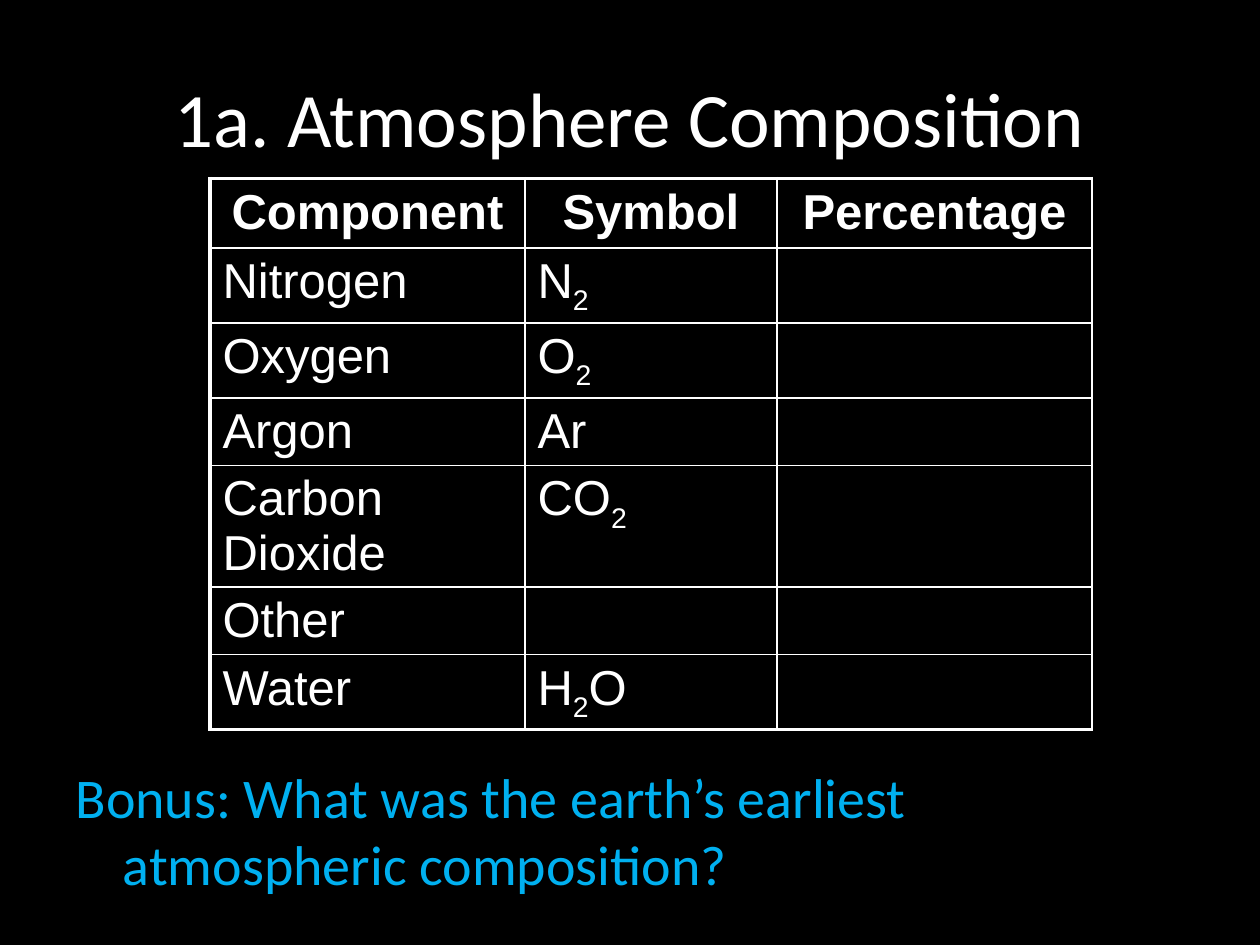
from pptx import Presentation
from pptx.dml.color import RGBColor
from pptx.enum.text import MSO_ANCHOR, MSO_AUTO_SIZE, PP_ALIGN
from pptx.oxml.ns import qn
from pptx.util import Pt
from lxml.etree import SubElement

BLACK = RGBColor(0x00, 0x00, 0x00)
WHITE = RGBColor(0xFF, 0xFF, 0xFF)
BLUE = RGBColor(0x00, 0xB0, 0xF0)

THIN, THICK = 1, 2.25
COL_WIDTHS = (180, 144, 180)
ROW_HEIGHTS = (39.6, 32.4, 32.4, 32.4, 32.4, 32.4, 38.2)
# Digits in the symbol column are set as subscripts
ROWS = (
    ("Component", "Symbol", "Percentage"),
    ("Nitrogen", "N2", ""),
    ("Oxygen", "O2", ""),
    ("Argon", "Ar", ""),
    ("Carbon Dioxide", "CO2", ""),
    ("Other", "", ""),
    ("Water", "H2O", ""),
)


def place(shape, box):
    shape.left, shape.top, shape.width, shape.height = map(Pt, box)


def set_font(p, name, size, color, bold=False):
    p.font.name, p.font.size, p.font.bold = name, Pt(size), bold
    p.font.color.rgb = color


def add_title(s, box, text):
    title = s.shapes.title
    place(title, box)
    tf = title.text_frame
    tf.text = text
    tf.auto_size = MSO_AUTO_SIZE.NONE
    tf.vertical_anchor = MSO_ANCHOR.MIDDLE
    p = tf.paragraphs[0]
    p.alignment = PP_ALIGN.CENTER
    set_font(p, "Calibri", 44, WHITE)


def add_bonus(s, box, text):
    body = s.placeholders[1]
    place(body, box)
    tf = body.text_frame
    tf.text = text
    tf.auto_size = MSO_AUTO_SIZE.NONE
    p = tf.paragraphs[0]
    set_font(p, "Calibri", 32, BLUE)
    # Hanging indent without a bullet
    pPr = p._p.get_or_add_pPr()
    pPr.set("marL", str(Pt(27)))
    pPr.set("indent", str(-Pt(27)))
    pPr.insert_element_before(pPr.makeelement(qn("a:buNone")), "a:defRPr")


def set_borders(cell, widths):
    tcPr = cell._tc.get_or_add_tcPr()
    for side, width in zip("LRTB", widths):
        ln = SubElement(tcPr, qn(f"a:ln{side}"), w=str(Pt(width)))
        fill = SubElement(ln, qn("a:solidFill"))
        SubElement(fill, qn("a:srgbClr"), val=str(WHITE))


def fill_cell(cell, text, header):
    p = cell.text_frame.paragraphs[0]
    set_font(p, "Arial", 28, WHITE, bold=header)
    p.alignment = PP_ALIGN.CENTER if header else PP_ALIGN.LEFT
    letters = ""
    for ch in text + "\n":
        if ch.isalpha() or ch == " ":
            letters += ch
            continue
        if letters:
            p.add_run().text = letters
            letters = ""
        if ch.isdigit():
            r = p.add_run()
            r.text = ch
            r._r.get_or_add_rPr().set("baseline", "-25000")


def add_composition_table(s, box):
    frame = s.shapes.add_table(len(ROWS), len(COL_WIDTHS), *map(Pt, box))
    table = frame.table
    table.first_row = table.horz_banding = False
    for col, width in zip(table.columns, COL_WIDTHS):
        col.width = Pt(width)
    for row, height in zip(table.rows, ROW_HEIGHTS):
        row.height = Pt(height)
    last = len(ROWS) - 1
    for i, texts in enumerate(ROWS):
        for j, text in enumerate(texts):
            cell = table.cell(i, j)
            # Heavier outline on the left, top and bottom
            set_borders(cell, (THICK if j == 0 else THIN, THIN,
                               THICK if i == 0 else THIN,
                               THICK if i == last else THIN))
            cell.fill.background()
            fill_cell(cell, text, header=i == 0)


def main():
    prs = Presentation()
    prs.slide_width, prs.slide_height = Pt(720), Pt(540)
    s = prs.slides.add_slide(prs.slide_layouts[1])
    s.background.fill.solid()
    s.background.fill.fore_color.rgb = BLACK

    add_title(s, (36, 21.6, 648, 90), "1a. Atmosphere Composition")
    add_bonus(s, (36, 432, 654, 90),
              "Bonus: What was the earth’s earliest atmospheric composition?")
    add_composition_table(s, (120, 102, sum(COL_WIDTHS), sum(ROW_HEIGHTS)))
    prs.save("out.pptx")


if __name__ == "__main__":
    main()
